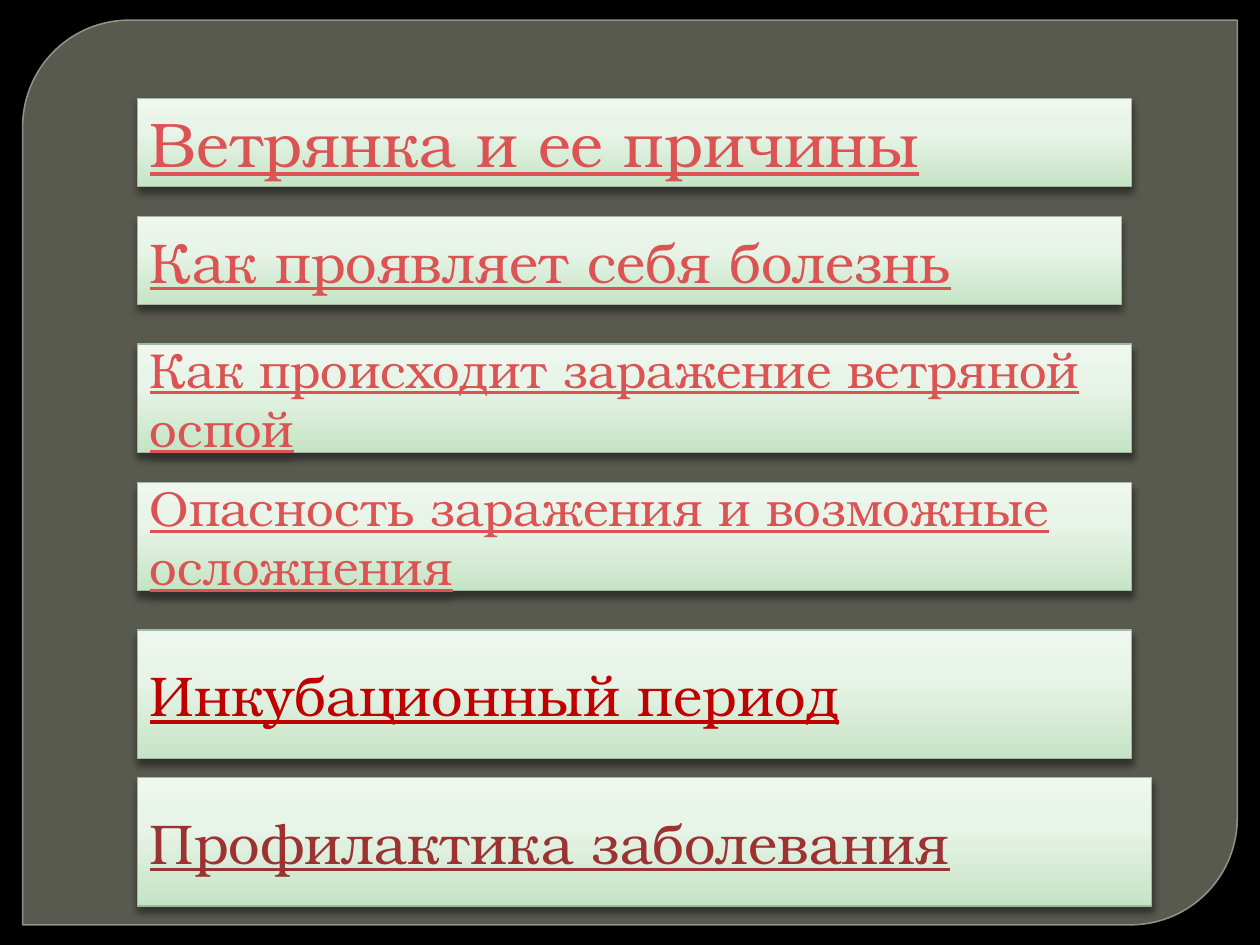
from copy import deepcopy

from lxml.etree import SubElement
from pptx import Presentation
from pptx.dml.color import RGBColor
from pptx.enum.shapes import MSO_SHAPE as Shape
from pptx.enum.text import MSO_ANCHOR as Anchor, PP_ALIGN as Align
from pptx.oxml.ns import qn
from pptx.util import Inches, Pt

FONT = "TeX Gyre Bonum"
LEFT = 1.09
LINK, DARK_RED, VISITED = "DB5353", "C00000", "9D3232"
STOPS = [(0, "C5E4C5"), (0.62, "E8F4E8"), (1, "EFF7EF")]
TOPICS = [
    ("Ветрянка и ее причины", 0.78, 7.89, 0.7, 36, LINK),
    ("Как проявляет себя болезнь", 1.72, 7.81, 0.7, 32, LINK),
    ("Как происходит заражение ветряной оспой", 2.73, 7.89, 0.86, 28, LINK),
    ("Опасность заражения и возможные осложнения", 3.83, 7.89, 0.86, 28, LINK),
    ("Инкубационный период", 5, 7.89, 1.02, 32, DARK_RED),
    ("Профилактика заболевания", 6.17, 8.05, 1.02, 32, VISITED),
]


def color(value):
    """Turn a hex string into a colour."""
    return RGBColor.from_string(value)


def add_alpha(element, percent):
    """Set the opacity of the first RGB colour inside an element."""
    rgb = next(element.iter(qn("a:srgbClr")))
    SubElement(rgb, qn("a:alpha"), val=str(percent * 1000))


def add_box(page, kind, left, top, width, height, line, weight):
    """Add an outlined shape without a shadow."""
    box = page.shapes.add_shape(
        kind, Inches(left), Inches(top), Inches(width), Inches(height))
    box.shadow.inherit = False
    box.line.color.rgb = color(line)
    box.line.width = Pt(weight)
    return box


def add_panel(page):
    """Add the translucent panel with two rounded corners."""
    panel = add_box(page, Shape.ROUND_2_DIAG_RECTANGLE,
                    0.18, 0.16, 9.64, 7.18, "9DA090", 0.87)
    panel.adjustments[0] = 0.118
    panel.adjustments[1] = 0
    panel.fill.solid()
    panel.fill.fore_color.rgb = color("888B7B")
    properties = panel._element.spPr
    add_alpha(properties.find(qn("a:solidFill")), 65)
    add_alpha(properties.find(qn("a:ln")), 88)


def fill_gradient(box):
    """Fill a box with the green gradient, darkest at the bottom."""
    box.fill.gradient()
    box.fill.gradient_angle = 90
    stop_list = next(box._element.spPr.iter(qn("a:gsLst")))
    stop_list.append(deepcopy(stop_list[0]))
    for stop, (position, value) in zip(box.fill.gradient_stops, STOPS):
        stop.position = position
        stop.color.rgb = color(value)


def add_shadow(box):
    """Give a box a soft shadow straight below it."""
    effects = box._element.spPr.find(qn("a:effectLst"))
    shadow = SubElement(
        effects, qn("a:outerShdw"), blurRad=str(Pt(4)), dist=str(Pt(3)),
        dir="5400000", algn="t", rotWithShape="0")
    SubElement(shadow, qn("a:srgbClr"), val="000000")
    add_alpha(shadow, 43)


def add_topic(page, text, top, width, height, size, text_color):
    """Add a topic bar with underlined text."""
    box = add_box(page, Shape.RECTANGLE, LEFT, top, width, height, "A0B9A0", 0.75)
    fill_gradient(box)
    add_shadow(box)
    frame = box.text_frame
    frame.word_wrap = True
    frame.vertical_anchor = Anchor.MIDDLE
    para = frame.paragraphs[0]
    para.text = text
    para.alignment = Align.LEFT
    font = para.font
    font.name = FONT
    font.size = Pt(size)
    font.underline = True
    font.color.rgb = color(text_color)


def main():
    """Build the contents slide and save it."""
    deck = Presentation()
    deck.slide_width, deck.slide_height = Inches(10), Inches(7.5)
    page = deck.slides.add_slide(deck.slide_layouts[6])
    page.background.fill.solid()
    page.background.fill.fore_color.rgb = color("000000")
    add_panel(page)
    for topic in TOPICS:
        add_topic(page, *topic)
    deck.save("out.pptx")


if __name__ == "__main__":
    main()
